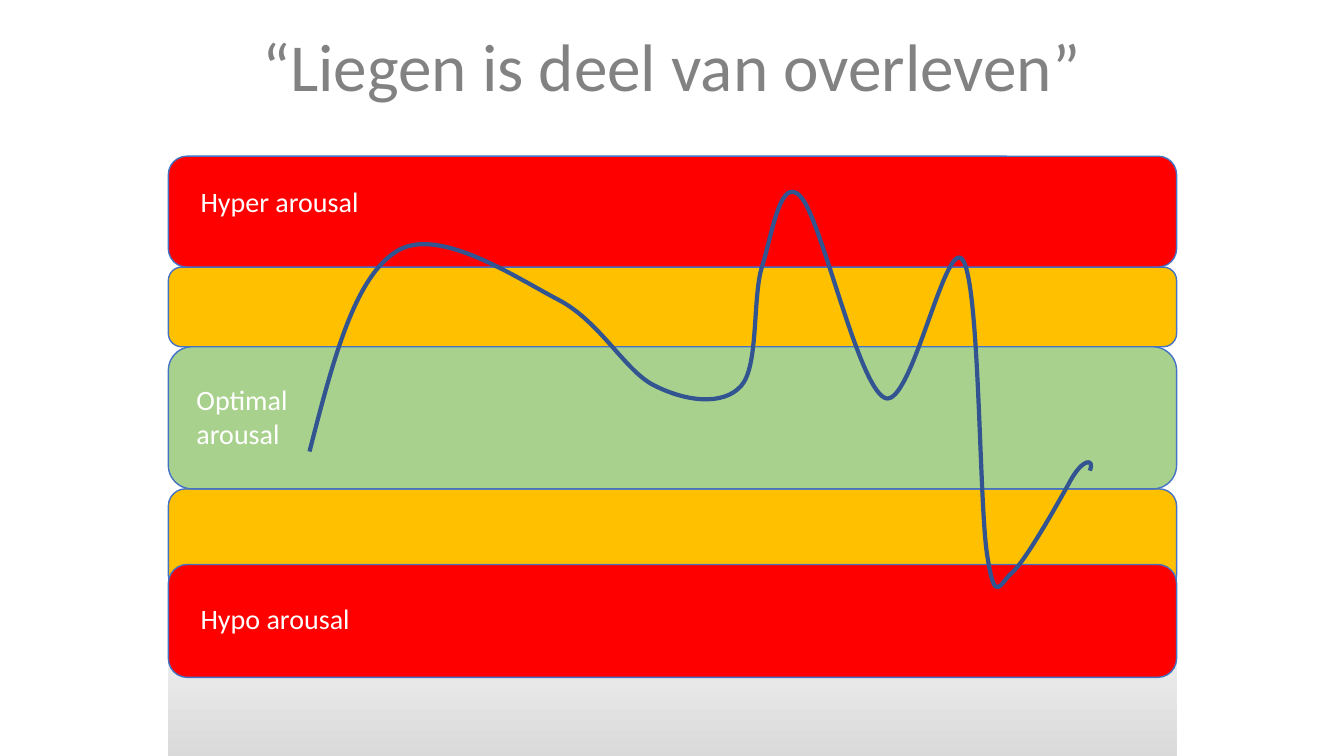
import pptx
import pptx.util
import pptx.oxml.ns
import pptx.dml.color
import pptx.enum.shapes
import pptx.enum.text
import lxml.etree

Inches = pptx.util.Inches
Pt = pptx.util.Pt
RGBColor = pptx.dml.color.RGBColor
Shape = pptx.enum.shapes.MSO_SHAPE
Align = pptx.enum.text.PP_ALIGN
Anchor = pptx.enum.text.MSO_ANCHOR
Fit = pptx.enum.text.MSO_AUTO_SIZE

WHITE = RGBColor(0xFF, 0xFF, 0xFF)
SILVER = RGBColor(0xD9, 0xD9, 0xD9)
GRAY = RGBColor(0x82, 0x82, 0x82)
RED = RGBColor(0xFF, 0x00, 0x00)
AMBER = RGBColor(0xFF, 0xC0, 0x00)
GREEN = RGBColor(0xA9, 0xD1, 0x8E)
BLUE = RGBColor(0x44, 0x72, 0xC4)
NAVY = RGBColor(0x32, 0x54, 0x91)

LEFT, WIDTH = 1.67, 10
BANDS = [
    (4.85, 1.02, AMBER),
    (2.65, 0.79, AMBER),
    (3.44, 1.41, GREEN),
    (1.55, 1.1, RED),
    (5.6, 1.12, RED),
]
LABELS = [
    ("Optimal arousal", 1.85, 3.75, 1.45, 0.77),
    ("Hyper arousal", 1.89, 1.78, 1.82, 0.44),
    ("Hypo arousal", 1.89, 5.92, 1.82, 0.44),
]
START = (3.07, 4.48)
CURVES = [
    ((3.32, 3.5), (3.53, 2.74), (3.94, 2.49)),
    ((4.35, 2.24), (5.11, 2.75), (5.53, 2.97)),
    ((5.96, 3.19), (6.2, 3.69), (6.5, 3.83)),
    ((6.8, 3.98), (7.17, 4.03), (7.35, 3.83)),
    ((7.53, 3.63), (7.46, 2.95), (7.56, 2.64)),
    ((7.66, 2.32), (7.74, 1.73), (7.94, 1.95)),
    ((8.15, 2.17), (8.51, 3.84), (8.78, 3.95)),
    ((9.04, 4.05), (9.38, 2.33), (9.55, 2.58)),
    ((9.72, 2.84), (9.71, 4.98), (9.79, 5.5)),
    ((9.87, 6.02), (9.91, 5.79), (10.04, 5.68)),
    ((10.17, 5.56), (10.45, 5.07), (10.6, 4.8)),
    ((10.74, 4.53), (10.86, 4.55), (10.81, 4.67)),
]


class Deck:
    font = "Calibri"

    def __init__(self):
        self.show = pptx.Presentation()
        self.show.slide_width = Inches(13.33)
        self.show.slide_height = Inches(7.5)
        self.slide = self.show.slides.add_slide(self.show.slide_layouts[5])

    def style(self, frame, text, size, color, align):
        frame.word_wrap = True
        frame.text = text
        para = frame.paragraphs[0]
        para.alignment = align
        para.font.name = self.font
        para.font.size = Pt(size)
        para.font.color.rgb = color

    def title(self, text, x, y, w, h):
        head = self.slide.shapes.title
        head.left, head.top = Inches(x), Inches(y)
        head.width, head.height = Inches(w), Inches(h)
        frame = head.text_frame
        frame.auto_size = Fit.NONE
        frame.vertical_anchor = Anchor.MIDDLE
        self.style(frame, text, 48, GRAY, Align.CENTER)

    def label(self, text, x, y, w, h):
        box = self.slide.shapes.add_textbox(
            Inches(x), Inches(y), Inches(w), Inches(h))
        self.style(box.text_frame, text, 20, WHITE, Align.LEFT)

    def block(self, kind, top, height):
        shape = self.slide.shapes.add_shape(
            kind, Inches(LEFT), Inches(top), Inches(WIDTH), Inches(height))
        shape.shadow.inherit = False
        return shape

    def fade(self, top, height):
        shape = self.block(Shape.RECTANGLE, top, height)
        shape.line.fill.background()
        fill = shape.fill
        fill.gradient()
        fill.gradient_angle = 270
        for stop, place, color in zip(
                fill.gradient_stops, (0, 1), (WHITE, SILVER)):
            stop.position = place
            stop.color.rgb = color

    def band(self, top, height, color):
        shape = self.block(Shape.ROUNDED_RECTANGLE, top, height)
        shape.fill.solid()
        shape.fill.fore_color.rgb = color
        shape.line.color.rgb = BLUE
        shape.line.width = Pt(1)

    def curve(self, start, curves):
        form = self.slide.shapes.build_freeform(
            Inches(start[0]), Inches(start[1]), scale=1.0)
        form.add_line_segments(
            [(Inches(x), Inches(y)) for *_, (x, y) in curves], close=False)
        shape = form.convert_to_shape()
        shape.shadow.inherit = False
        shape.fill.background()
        shape.line.color.rgb = NAVY
        shape.line.width = Pt(3)
        name = pptx.oxml.ns.qn
        lines = list(shape.element.iter(name("a:lnTo")))
        for line, points in zip(lines, curves):
            line.tag = name("a:cubicBezTo")
            line.clear()
            for x, y in points:
                lxml.etree.SubElement(
                    line, name("a:pt"),
                    x=str(Inches(x) - shape.left),
                    y=str(Inches(y) - shape.top))


def main():
    deck = Deck()
    deck.fade(5.6, 1.95)
    deck.title("“Liegen is deel van overleven”", 0.79, 0.19, 11.74, 0.91)
    for band in BANDS:
        deck.band(*band)
    deck.curve(START, CURVES)
    for label in LABELS:
        deck.label(*label)
    deck.show.save("out.pptx")


if __name__ == "__main__":
    main()
